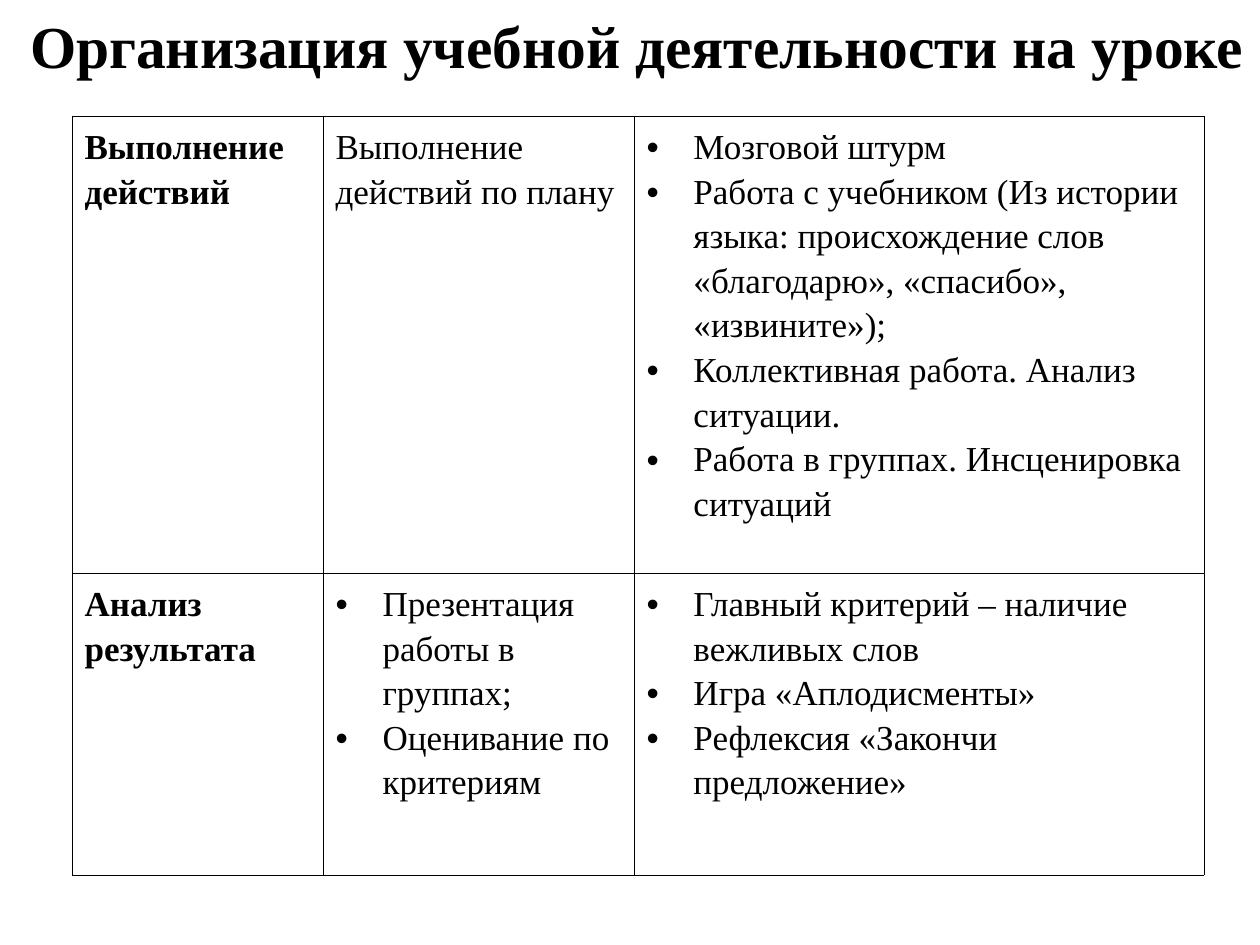
from lxml import etree
from pptx import Presentation
from pptx import util as u
from pptx.dml.color import RGBColor
from pptx.enum import text
from pptx.oxml import ns

BLACK = RGBColor(0, 0, 0)
WHITE = RGBColor(255, 255, 255)
FONT = "Times New Roman"
SCALE = 914400 / 126
COLS = [251, 311, 570]
ROWS = [457, 302]
CELLS = [
    [
        ["Выполнение действий"],
        ["Выполнение действий по плану"],
        [
            "Мозговой штурм",
            "Работа с учебником (Из истории языка: происхождение слов "
            "«благодарю», «спасибо», «извините»);",
            "Коллективная работа. Анализ ситуации.",
            "Работа в группах. Инсценировка ситуаций",
        ],
    ],
    [
        ["Анализ результата"],
        ["Презентация работы в группах;", "Оценивание по критериям"],
        [
            "Главный критерий – наличие вежливых слов",
            "Игра «Аплодисменты»",
            "Рефлексия «Закончи предложение»",
        ],
    ],
]


def px(num):
    """Turn pixels into EMU."""
    return u.Emu(round(num * SCALE))


def add_bullet(para):
    """Give a paragraph a black bullet and a hanging indent."""
    props = para._p.get_or_add_pPr()
    props.set("marL", str(px(47)))
    props.set("indent", str(px(-47)))
    color = etree.SubElement(props, ns.qn("a:buClr"))
    etree.SubElement(color, ns.qn("a:srgbClr"), val=str(BLACK))
    etree.SubElement(props, ns.qn("a:buFont"), typeface="Arial")
    etree.SubElement(props, ns.qn("a:buChar"), char="•")


def write(frame, lines, size=20, bold=False, align=None, space=None, bullet=False):
    """Fill a text frame with formatted paragraphs."""
    frame.word_wrap = True
    for i, line in enumerate(lines):
        para = frame.add_paragraph() if i else frame.paragraphs[0]
        para.alignment = align
        para.line_spacing = space
        if bullet:
            add_bullet(para)
        run = para.add_run()
        run.text = line
        font = run.font
        font.name, font.size, font.bold = FONT, u.Pt(size), bold
        font.color.rgb = BLACK


def add_edges(cell):
    """Draw thin black borders round a cell."""
    props = cell._tc.get_or_add_tcPr()
    for i, side in enumerate("LRTB"):
        line = etree.Element(ns.qn(f"a:ln{side}"), w=str(u.Pt(0.45)))
        fill = etree.SubElement(line, ns.qn("a:solidFill"))
        etree.SubElement(fill, ns.qn("a:srgbClr"), val=str(BLACK))
        props.insert(i, line)


def add_title(slide, line):
    """Place the centred heading in a plain outline."""
    wide, high = px(1274), px(90)
    pen = slide.shapes.build_freeform(0, 0)
    pen.add_line_segments([(wide, 0), (wide, high), (0, high)], close=True)
    shape = pen.convert_to_shape()
    shape.shadow.inherit = False
    shape.fill.background()
    shape.line.fill.background()
    frame = shape.text_frame
    frame.vertical_anchor = text.MSO_ANCHOR.MIDDLE
    write(frame, [line], size=34, bold=True, align=text.PP_ALIGN.CENTER)


def add_grid(slide):
    """Place the table of lesson stages."""
    frame = slide.shapes.add_table(
        len(ROWS), len(COLS), px(72), px(116), px(sum(COLS)), px(sum(ROWS))
    )
    table = frame.table
    table.first_row = table.horz_banding = False
    for col, width in zip(table.columns, COLS):
        col.width = px(width)
    for row, height, items in zip(table.rows, ROWS, CELLS):
        row.height = px(height)
        for i, (cell, lines) in enumerate(zip(row.cells, items)):
            cell.fill.solid()
            cell.fill.fore_color.rgb = WHITE
            add_edges(cell)
            write(cell.text_frame, lines, bold=i == 0, space=1.15,
                  bullet=len(lines) > 1)


def main():
    """Build and save the slide."""
    deck = Presentation()
    deck.slide_width, deck.slide_height = px(1260), px(945)
    slide = deck.slides.add_slide(deck.slide_layouts[6])
    add_grid(slide)
    add_title(slide, "Организация учебной деятельности на уроке")
    deck.save("out.pptx")


if __name__ == "__main__":
    main()
